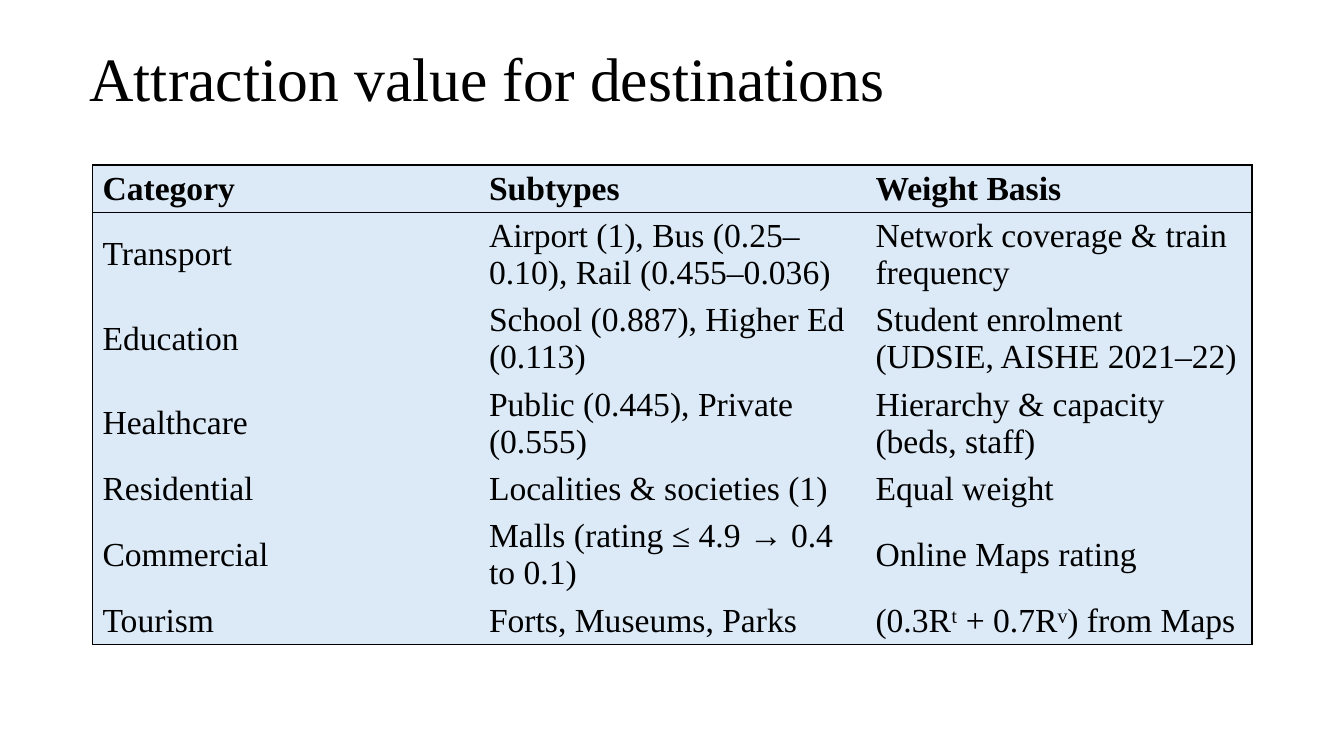
from lxml.etree import SubElement
from pptx import Presentation
from pptx.dml.color import RGBColor
from pptx.enum.text import MSO_ANCHOR, MSO_AUTO_SIZE, PP_ALIGN
from pptx.oxml.ns import qn
from pptx.util import Cm, Pt

# Content
TITLE = "Attraction value for destinations"
ROWS = [
    ("Category", "Subtypes", "Weight Basis"),
    ("Transport", "Airport (1), Bus (0.25–0.10), Rail (0.455–0.036)",
     "Network coverage & train frequency"),
    ("Education", "School (0.887), Higher Ed (0.113)",
     "Student enrolment (UDSIE, AISHE 2021–22)"),
    ("Healthcare", "Public (0.445), Private (0.555)",
     "Hierarchy & capacity (beds, staff)"),
    ("Residential", "Localities & societies (1)", "Equal weight"),
    ("Commercial", "Malls (rating ≤ 4.9 → 0.4 to 0.1)", "Online Maps rating"),
    ("Tourism", "Forts, Museums, Parks", "(0.3Rᵗ + 0.7Rᵛ) from Maps"),
]
LINES_PER_ROW = [1, 2, 2, 2, 1, 2, 1]

# Look
FONT = "Times New Roman"
BLACK, PALE_BLUE = "000000", "DCEAF7"
NO_STYLE = "{2D5ABB26-0587-4C30-8999-92F81FD0307C}"
COLUMN_WIDTH = 9.74
LINE_HEIGHT, ROW_PADDING = 0.93, 0.26


def color(hex_string):
    return RGBColor.from_string(hex_string)


def format_text(frame, size, bold=False):
    for para in frame.paragraphs:
        para.alignment = PP_ALIGN.LEFT
        for span in para.runs:
            span.font.name = FONT
            span.font.size = Pt(size)
            span.font.bold = bold
            span.font.color.rgb = color(BLACK)


def set_borders(cell, drawn_sides):
    properties = cell._tc.get_or_add_tcPr()
    for position, side in enumerate("LRTB"):
        line = SubElement(properties, qn(f"a:ln{side}"), w=str(Pt(1)))
        if side in drawn_sides:
            fill = SubElement(line, qn("a:solidFill"))
            SubElement(fill, qn("a:srgbClr"), val=BLACK)
        else:
            SubElement(line, qn("a:noFill"))
        properties.insert(position, line)  # borders come before the cell fill


def border_sides(row, column):
    last_row, last_column = len(ROWS) - 1, len(ROWS[0]) - 1
    sides = {
        "L": column == 0,
        "R": column == last_column,
        "T": row in (0, 1),
        "B": row in (0, last_row),
    }
    return [side for side, drawn in sides.items() if drawn]


def add_title(page):
    box = page.shapes.title
    box.left, box.top, box.width, box.height = Cm(2), Cm(1.17), Cm(28.65), Cm(1.78)
    frame = box.text_frame
    frame.text = TITLE
    frame.auto_size = MSO_AUTO_SIZE.NONE
    frame.vertical_anchor = MSO_ANCHOR.MIDDLE
    frame.paragraphs[0].line_spacing = 0.9
    format_text(frame, 44)


def add_weights_table(page):
    heights = [ROW_PADDING + LINE_HEIGHT * lines for lines in LINES_PER_ROW]
    columns = len(ROWS[0])
    frame = page.shapes.add_table(len(ROWS), columns, Cm(2.33), Cm(4.16),
                                  Cm(COLUMN_WIDTH * columns), Cm(sum(heights)))
    table = frame.table
    table.horz_banding = False
    table._tbl.tblPr.find(qn("a:tableStyleId")).text = NO_STYLE
    for column in table.columns:
        column.width = Cm(COLUMN_WIDTH)
    for row, (texts, height) in enumerate(zip(ROWS, heights)):
        table.rows[row].height = Cm(height)
        for column, text in enumerate(texts):
            cell = table.cell(row, column)
            cell.text_frame.text = text
            cell.vertical_anchor = MSO_ANCHOR.MIDDLE
            cell.fill.solid()
            cell.fill.fore_color.rgb = color(PALE_BLUE)
            format_text(cell.text_frame, 24, bold=row == 0)
            set_borders(cell, border_sides(row, column))


def main():
    deck = Presentation()
    deck.slide_width, deck.slide_height = Cm(33.87), Cm(19.05)
    page = deck.slides.add_slide(deck.slide_layouts[5])  # title only
    add_title(page)
    add_weights_table(page)
    deck.save("out.pptx")


if __name__ == "__main__":
    main()
